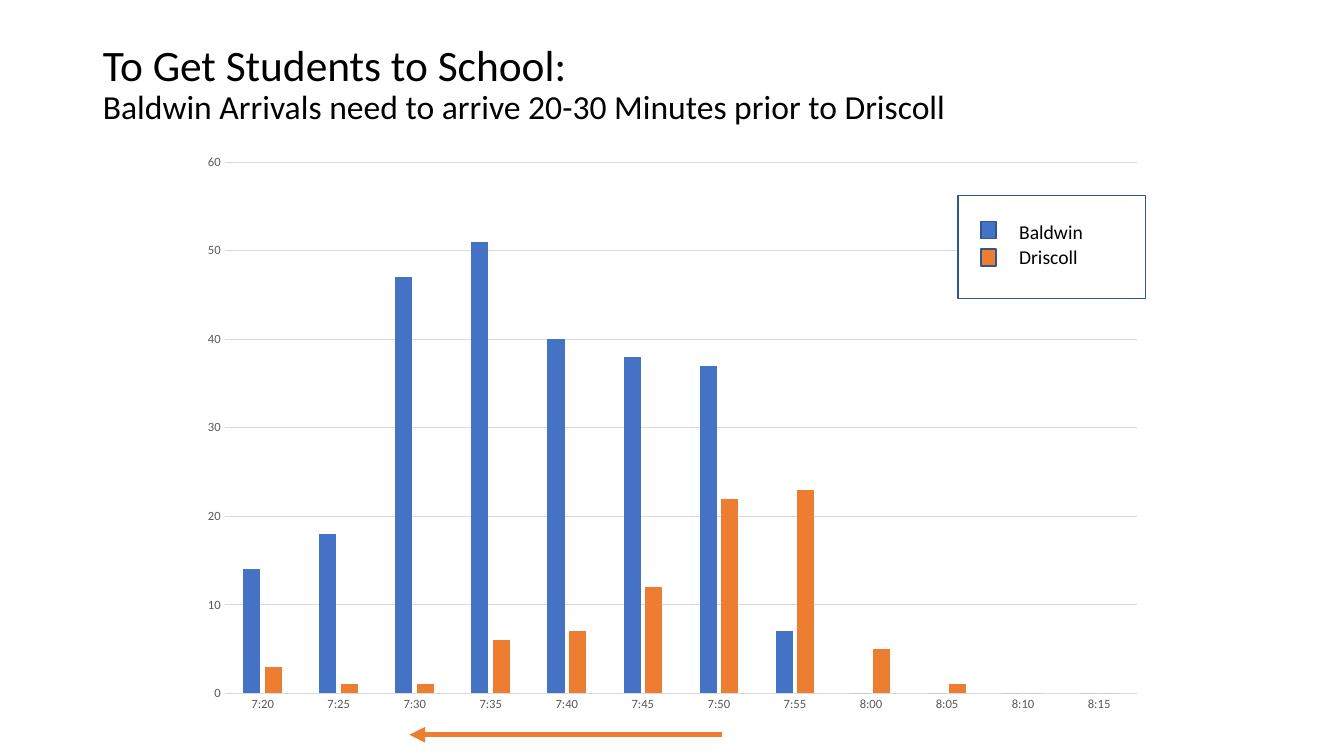
from dataclasses import dataclass

from lxml.etree import SubElement
from pptx import Presentation
from pptx.chart.data import CategoryChartData
from pptx.dml.color import RGBColor
from pptx.enum.chart import XL_CHART_TYPE, XL_TICK_MARK
from pptx.enum.shapes import MSO_CONNECTOR, MSO_SHAPE
from pptx.enum.text import MSO_ANCHOR, MSO_AUTO_SIZE, PP_ALIGN
from pptx.oxml.ns import qn
from pptx.slide import Slide
from pptx.util import Emu, Inches, Pt

SLIDE_WIDTH = Inches(13.33)
SLIDE_HEIGHT = Inches(7.5)
FONT = "Calibri"

BLACK = RGBColor(0x00, 0x00, 0x00)
WHITE = RGBColor(0xFF, 0xFF, 0xFF)
BLUE = RGBColor(0x44, 0x72, 0xC4)
ORANGE = RGBColor(0xED, 0x7D, 0x31)
OUTLINE = RGBColor(0x32, 0x54, 0x91)
AXIS_TEXT = RGBColor(0x59, 0x59, 0x59)
GRID = RGBColor(0xD9, 0xD9, 0xD9)

HEADING = "To Get Students to School:"
SUBHEADING = "Baldwin Arrivals need to arrive 20-30 Minutes prior to Driscoll"
FIRST_ARRIVAL = 7 * 60 + 20
ARRIVAL_STEP = 5
ARRIVAL_SLOTS = 12


@dataclass(frozen=True)
class Area:
    left: float
    top: float
    width: float
    height: float

    def emu(self) -> tuple[Emu, Emu, Emu, Emu]:
        return (across(self.left), down(self.top),
                across(self.width), down(self.height))


@dataclass(frozen=True)
class School:
    name: str
    color: RGBColor
    arrivals: tuple[int, ...]
    label_width: float


SCHOOLS = (
    School("Baldwin", BLUE, (14, 18, 47, 51, 40, 38, 37, 7, 0, 0, 0, 0), 6.3),
    School("Driscoll", ORANGE, (3, 1, 1, 6, 7, 12, 22, 23, 5, 1, 0, 0), 5.93),
)

TITLE_AREA = Area(6.9, 1.6, 86.27, 19.33)
CHART_AREA = Area(14.03, 18.93, 72.02, 76.8)
LEGEND_AREA = Area(71.27, 25.87, 13.95, 13.6)
SWATCH_STEP = 3.6
LABEL_STEP = 3.33


def across(percent: float) -> Emu:
    return Emu(round(SLIDE_WIDTH * percent / 100))


def down(percent: float) -> Emu:
    return Emu(round(SLIDE_HEIGHT * percent / 100))


def style_font(font, size: float, color: RGBColor) -> None:
    font.name = FONT
    font.size = Pt(size)
    font.color.rgb = color


def add_heading(slide: Slide) -> None:
    title = slide.shapes.title
    title.left, title.top, title.width, title.height = TITLE_AREA.emu()
    frame = title.text_frame
    frame.text = f"{HEADING}\v{SUBHEADING}"
    frame.vertical_anchor = MSO_ANCHOR.MIDDLE
    frame.auto_size = MSO_AUTO_SIZE.NONE
    paragraph = frame.paragraphs[0]
    paragraph.alignment = PP_ALIGN.LEFT
    paragraph.line_spacing = 0.9
    for run, size in zip(paragraph.runs, (31, 24)):
        style_font(run.font, size, BLACK)


def add_arrivals_chart(slide: Slide) -> None:
    minutes = [FIRST_ARRIVAL + ARRIVAL_STEP * slot for slot in range(ARRIVAL_SLOTS)]
    arrivals = CategoryChartData()
    arrivals.categories = [f"{minute // 60}:{minute % 60:02d}" for minute in minutes]
    for school in SCHOOLS:
        arrivals.add_series(school.name, school.arrivals)
    chart = slide.shapes.add_chart(
        XL_CHART_TYPE.COLUMN_CLUSTERED, *CHART_AREA.emu(), arrivals).chart
    chart.has_title = False
    chart.has_legend = False
    style_font(chart.font, 10, BLACK)

    plot = chart.plots[0]
    plot.gap_width = 219
    plot.overlap = -27
    plot.vary_by_categories = False
    for series, school in zip(plot.series, SCHOOLS):
        series.format.fill.solid()
        series.format.fill.fore_color.rgb = school.color

    times, counts = chart.category_axis, chart.value_axis
    for axis in (times, counts):
        axis.major_tick_mark = XL_TICK_MARK.NONE
        axis.minor_tick_mark = XL_TICK_MARK.NONE
        style_font(axis.tick_labels.font, 9, AXIS_TEXT)
    counts.minimum_scale, counts.maximum_scale, counts.major_unit = 0, 60, 10
    counts.has_major_gridlines = True
    counts.format.line.fill.background()
    for line in (times.format.line, counts.major_gridlines.format.line):
        line.color.rgb = GRID
        line.width = Pt(0.75)


def add_box(slide: Slide, area: Area, color: RGBColor) -> None:
    box = slide.shapes.add_shape(MSO_SHAPE.RECTANGLE, *area.emu())
    box.shadow.inherit = False
    box.fill.solid()
    box.fill.fore_color.rgb = color
    box.line.color.rgb = OUTLINE
    box.line.width = Pt(1)


def add_label(slide: Slide, area: Area, name: str) -> None:
    frame = slide.shapes.add_textbox(*area.emu()).text_frame
    frame.text = name
    frame.word_wrap = False
    frame.auto_size = MSO_AUTO_SIZE.SHAPE_TO_FIT_TEXT
    style_font(frame.paragraphs[0].runs[0].font, 14, BLACK)


def add_legend(slide: Slide) -> None:
    add_box(slide, LEGEND_AREA, WHITE)
    for row, school in enumerate(SCHOOLS):
        add_box(slide, Area(72.99, 29.33 + row * SWATCH_STEP, 1.13, 2.27), school.color)
    for row, school in enumerate(SCHOOLS):
        label_area = Area(75.09, 28.4 + row * LABEL_STEP, school.label_width, 4.53)
        add_label(slide, label_area, school.name)


def add_earlier_arrow(slide: Slide) -> None:
    arrow = slide.shapes.add_connector(
        MSO_CONNECTOR.STRAIGHT, across(53.71), down(97.2), across(30.46), down(97.2))
    arrow.line.color.rgb = ORANGE
    arrow.line.width = Pt(3.75)
    SubElement(arrow.line._get_or_add_ln(), qn("a:tailEnd"), type="triangle")
    SubElement(arrow._element.spPr, qn("a:effectLst"))


def main() -> None:
    presentation = Presentation()
    presentation.slide_width = SLIDE_WIDTH
    presentation.slide_height = SLIDE_HEIGHT
    title_only = presentation.slide_layouts[5]
    slide = presentation.slides.add_slide(title_only)
    add_arrivals_chart(slide)
    add_heading(slide)
    add_legend(slide)
    add_earlier_arrow(slide)
    presentation.save("out.pptx")


if __name__ == "__main__":
    main()
